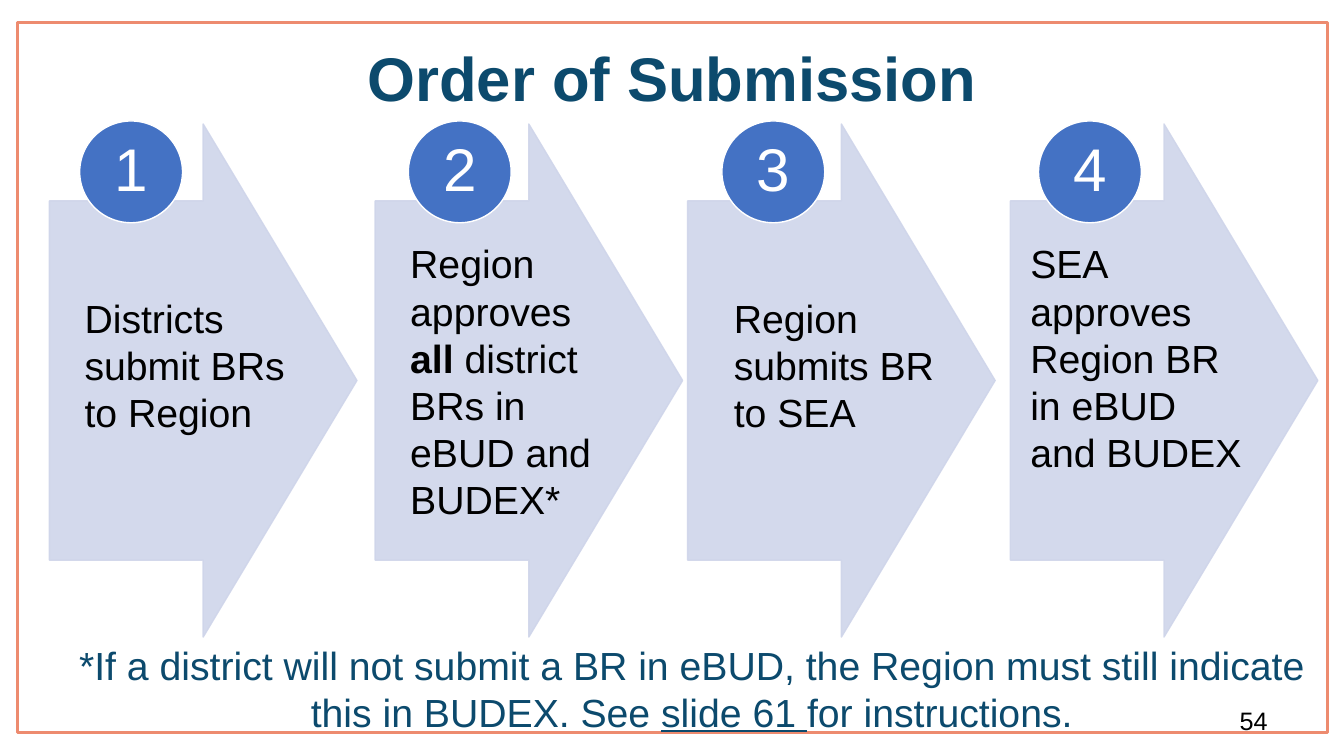
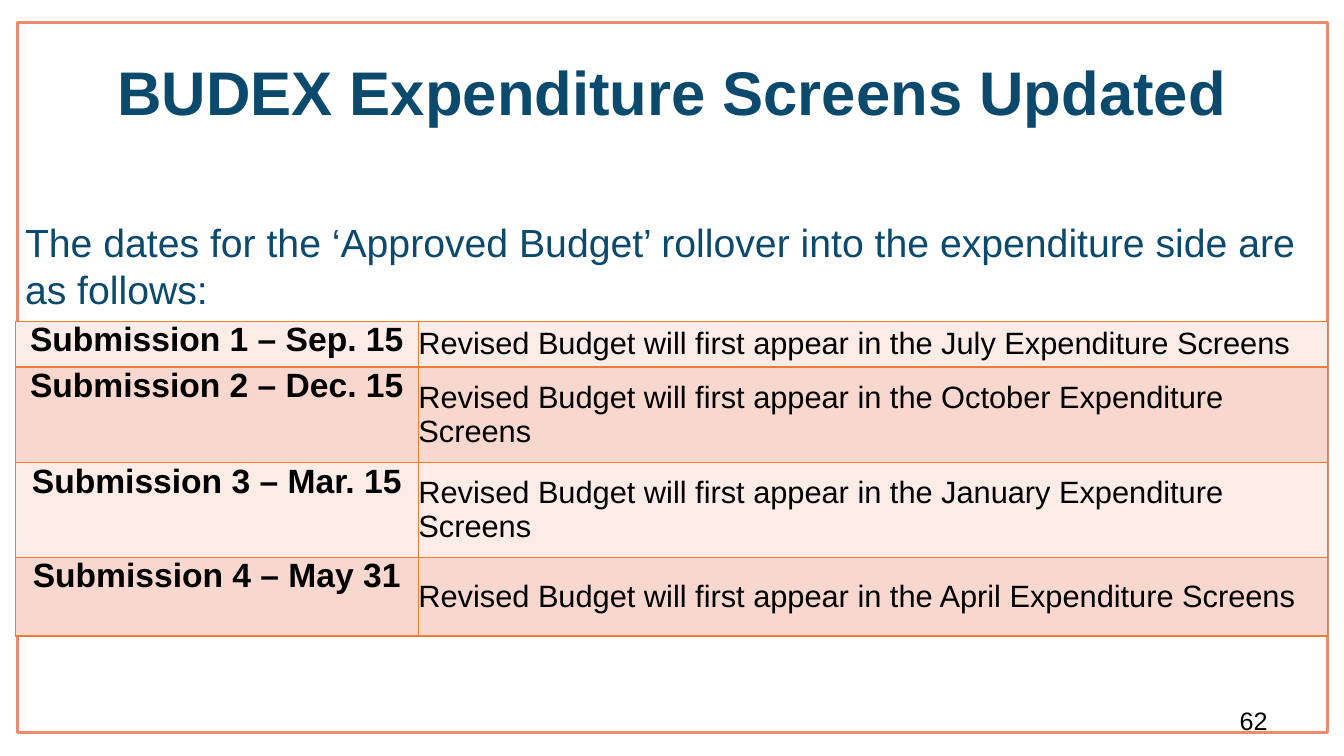
from lxml import etree
from pptx import Presentation
from pptx.dml.color import RGBColor
from pptx.enum.shapes import MSO_SHAPE
from pptx.enum.text import MSO_ANCHOR, PP_ALIGN
from pptx.oxml.ns import qn
from pptx.util import Inches, Pt

CENTER, LEFT, RIGHT = PP_ALIGN.CENTER, PP_ALIGN.LEFT, PP_ALIGN.RIGHT
MIDDLE, TOP = MSO_ANCHOR.MIDDLE, MSO_ANCHOR.TOP
RECTANGLE, OVAL, ARROW = MSO_SHAPE.RECTANGLE, MSO_SHAPE.OVAL, MSO_SHAPE.RIGHT_ARROW

FONT = "Arial"
NAVY, BLACK, WHITE = "0C4A6D", "000000", "FFFFFF"
FRAME, BLUE, LAVENDER = "ED8B6F", "4472C4", "CFD5EA"
BORDER, ROW_FILLS = "ED7D31", ("FCECE8", "F8D7CE")

BOLD, UNDERLINED = {"bold": True}, {"underline": True}
TITLE = {"size": 44, "color": NAVY, "bold": True}
BODY = {"size": 28, "color": NAVY}
STEP = {"size": 28, "color": BLACK}
NUMBER = {"size": 43, "color": WHITE}
PAGE = {"size": 18, "color": BLACK}
DATE = {"size": 24, "color": BLACK, "bold": True}
DETAIL = {"size": 22, "color": BLACK, "bold": False}

STEPS = [
    {"arrow": 0.49, "circle": 0.79, "text": (0.74, 2.87, 2.39, 1.51),
     "runs": [("Districts submit BRs to Region", {})]},
    {"arrow": 3.72, "circle": 4.05, "text": (3.97, 2.33, 2.08, 2.93),
     "runs": [("Region approves ", {}), ("all", BOLD),
              (" district BRs in eBUD and BUDEX*", {})]},
    {"arrow": 6.82, "circle": 7.16, "text": (7.18, 2.87, 2.39, 1.51),
     "runs": [("Region submits BR to SEA", {})]},
    {"arrow": 10.02, "circle": 10.3, "text": (10.12, 2.33, 2.39, 2.46),
     "runs": [("SEA approves Region BR in eBUD and BUDEX", {})]},
]
FOOTNOTE = [
    ("*If a district will not submit a BR in eBUD, the Region must still "
     "indicate this in BUDEX. See ", {}),
    ("slide 61 ", UNDERLINED),
    ("for instructions.", {}),
]
INTRO = ("The dates for the ‘Approved Budget’ rollover into the expenditure "
         "side are as follows:")
ROLLOVERS = [
    ("Submission 1 – Sep. 15", "July", 0.45),
    ("Submission 2 – Dec. 15", "October", 0.95),
    ("Submission 3 – Mar. 15", "January", 0.94),
    ("Submission 4 – May 31", "April", 0.78),
]
COLUMN_WIDTHS = (4, 9.02)


def rgb(value):
    return RGBColor.from_string(value)


def box(*lengths):
    return [Inches(length) for length in lengths]


def write(frame, runs, style, align=LEFT, anchor=TOP, spacing=None):
    frame.word_wrap = True
    frame.vertical_anchor = anchor
    paragraph = frame.paragraphs[0]
    paragraph.alignment = align
    paragraph.line_spacing = spacing
    for text, changes in runs:
        run = paragraph.add_run()
        run.text = text
        values = {**style, **changes}
        run.font.color.rgb = rgb(values.pop("color"))
        values["size"] = Pt(values["size"])
        values["name"] = FONT
        for name, value in values.items():
            setattr(run.font, name, value)


def add_text(slide, place, runs, style, **layout):
    write(slide.shapes.add_textbox(*box(*place)).text_frame, runs, style, **layout)


def add_panel(slide, kind, place, fill, line, width=1):
    shape = slide.shapes.add_shape(kind, *box(*place))
    shape.shadow.inherit = False
    if fill:
        shape.fill.solid()
        shape.fill.fore_color.rgb = rgb(fill)
    else:
        shape.fill.background()
    shape.line.color.rgb = rgb(line)
    shape.line.width = Pt(width)
    return shape


def set_opacity(shape, percent):
    for color in shape.element.spPr.iter(qn("a:srgbClr")):
        etree.SubElement(color, qn("a:alpha"), val=str(percent * 1000))


def set_borders(cell, color, width):
    properties = cell._tc.get_or_add_tcPr()
    for side in ("a:lnL", "a:lnR", "a:lnT", "a:lnB"):
        line = etree.SubElement(properties, qn(side), w=str(Pt(width)))
        fill = etree.SubElement(line, qn("a:solidFill"))
        etree.SubElement(fill, qn("a:srgbClr"), val=color)


def start_slide(presentation, title, title_top, page):
    slide = presentation.slides.add_slide(presentation.slide_layouts[6])
    add_panel(slide, RECTANGLE, (0.17, 0.22, 13, 7.05), None, FRAME, 2)
    add_text(slide, (0.17, title_top, 13, 1.45), [(title, {})], TITLE,
             align=CENTER, anchor=MIDDLE, spacing=0.9)
    add_text(slide, (9.56, 6.95, 3.11, 0.4), [(page, {})], PAGE, align=RIGHT)
    return slide


def add_step(slide, number, step):
    arrow = add_panel(slide, ARROW, (step["arrow"], 1.23, 3.05, 5.09), LAVENDER, LAVENDER)
    arrow.adjustments[0] = 0.7
    arrow.adjustments[1] = 0.5
    set_opacity(arrow, 90)
    circle = add_panel(slide, OVAL, (step["circle"], 1.2, 1.02, 1.01), BLUE, WHITE)
    frame = circle.text_frame
    for side in ("left", "top", "right", "bottom"):
        setattr(frame, f"margin_{side}", Inches(0.03))
    write(frame, [(str(number), {})], NUMBER, align=CENTER, anchor=MIDDLE, spacing=0.9)
    add_text(slide, step["text"], step["runs"], STEP)


def fill_cell(cell, text, style, fill, align, anchor):
    for side in ("left", "top", "right", "bottom"):
        setattr(cell, f"margin_{side}", 0)
    write(cell.text_frame, [(text, {})], style, align)
    cell.vertical_anchor = anchor
    set_borders(cell, BORDER, 1)
    cell.fill.solid()
    cell.fill.fore_color.rgb = rgb(fill)


def add_rollover_table(slide):
    height = sum(row[2] for row in ROLLOVERS)
    place = box(0.15, 3.19, sum(COLUMN_WIDTHS), height)
    table = slide.shapes.add_table(len(ROLLOVERS), len(COLUMN_WIDTHS), *place).table
    table.first_row = False
    table.horz_banding = False
    for column, width in zip(table.columns, COLUMN_WIDTHS):
        column.width = Inches(width)
    for index, (date, month, row_height) in enumerate(ROLLOVERS):
        table.rows[index].height = Inches(row_height)
        fill = ROW_FILLS[index % 2]
        detail = f"Revised Budget will first appear in the {month} Expenditure Screens"
        fill_cell(table.cell(index, 0), date, DATE, fill, CENTER, TOP)
        fill_cell(table.cell(index, 1), detail, DETAIL, fill, LEFT, MIDDLE)


def main():
    presentation = Presentation()
    presentation.slide_width, presentation.slide_height = box(13.33, 7.5)

    slide = start_slide(presentation, "Order of Submission", 0.08, "54")
    for number, step in enumerate(STEPS, 1):
        add_step(slide, number, step)
    add_text(slide, (0.39, 6.31, 12.94, 1.04), FOOTNOTE, BODY, align=CENTER)

    slide = start_slide(presentation, "BUDEX Expenditure Screens Updated", 0.22, "62")
    add_text(slide, (0.15, 2.12, 13.02, 1.04), [(INTRO, {})], BODY)
    add_rollover_table(slide)

    presentation.save("out.pptx")


if __name__ == "__main__":
    main()
